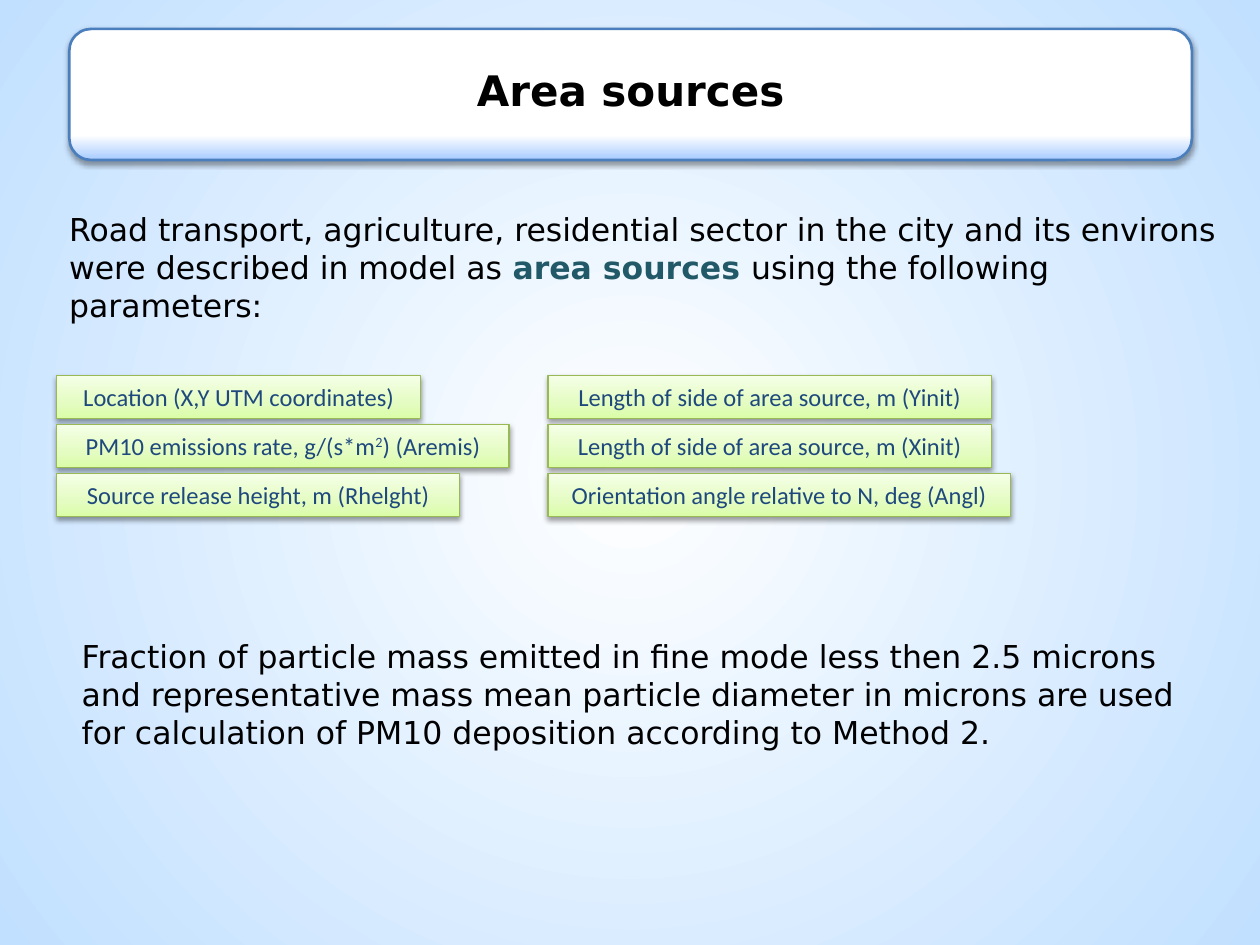
from dataclasses import dataclass

from lxml.etree import SubElement
from pptx import Presentation
from pptx.dml.color import RGBColor
from pptx.enum.shapes import MSO_SHAPE as Preset
from pptx.enum.text import MSO_ANCHOR as Anchor, MSO_AUTO_SIZE as AutoSize, PP_ALIGN as Align
from pptx.oxml.ns import qn
from pptx.util import Inches, Pt

SLIDE_W, SLIDE_H = 10, 7.5
COLUMN_LEFTS = (0.45, 4.35)
FIRST_ROW, ROW_PITCH, ROW_HEIGHT = 2.98, 0.39, 0.34

BACKDROP = ((0, "FFFFFF"), (100, "C1E0FF"))
TITLE_FILL = ((0, "A7CBFF"), (19, "FFFFFF"))
PARAMETER_FILL = ((0, "DAFDA7"), (35, "E4FCC2"), (100, "F5FFE7"))

TITLE = {"name": "DejaVu Sans", "size": Pt(24), "bold": True}
BODY = {"name": "DejaVu Sans", "size": Pt(18), "bold": False}
LABEL = {"name": "Calibri", "size": Pt(14), "bold": False}


@dataclass(frozen=True)
class Span:
    text: str
    color: str = "000000"
    bold: bool = False
    raised: bool = False


@dataclass(frozen=True)
class Parameter:
    column: int
    row: int
    width: float
    text: str  # "^" encloses a superscript


PARAMETERS = (
    Parameter(0, 0, 2.89, "Location (X,Y UTM coordinates)"),
    Parameter(0, 1, 3.59, "PM10 emissions rate, g/(s*m^2^) (Aremis)"),
    Parameter(0, 2, 3.2, "Source release height, m (Rhelght)"),
    Parameter(1, 0, 3.52, "Length of side of area source, m (Yinit)"),
    Parameter(1, 1, 3.52, "Length of side of area source, m (Xinit)"),
    Parameter(1, 2, 3.67, "Orientation angle relative to N, deg (Angl)"),
)


def rgb(color: str) -> RGBColor:
    return RGBColor.from_string(color)


def add_gradient(fill, element, stops, radial: bool = False) -> None:
    """Set a gradient that runs upwards, or outwards from the centre."""
    fill.gradient()
    gradient = element.find(".//" + qn("a:gradFill"))
    for child in list(gradient):
        gradient.remove(child)
    stop_list = SubElement(gradient, qn("a:gsLst"))
    for percent, color in stops:
        stop = SubElement(stop_list, qn("a:gs"), pos=str(percent * 1000))
        SubElement(stop, qn("a:srgbClr"), val=color)
    if radial:
        circle = SubElement(gradient, qn("a:path"), path="circle")
        SubElement(circle, qn("a:fillToRect"), dict.fromkeys("ltrb", "50000"))
    else:
        SubElement(gradient, qn("a:lin"), ang="16200000", scaled="1")


def add_shadow(shape) -> None:
    shape.shadow.inherit = False
    effects = shape._element.spPr.find(qn("a:effectLst"))
    shadow = SubElement(effects, qn("a:outerShdw"), blurRad=str(Pt(3.1)),
                        dist=str(Pt(1.6)), dir="5400000", rotWithShape="0")
    black = SubElement(shadow, qn("a:srgbClr"), val="000000")
    SubElement(black, qn("a:alpha"), val="38000")


def write(shape, spans, font_format: dict, align=Align.LEFT, anchor=Anchor.TOP):
    frame = shape.text_frame
    frame.word_wrap = True
    frame.vertical_anchor = anchor
    paragraph = frame.paragraphs[0]
    paragraph.alignment = align
    for span in spans:
        run = paragraph.add_run()
        run.text = span.text
        for attribute, value in font_format.items():
            setattr(run.font, attribute, value)
        run.font.color.rgb = rgb(span.color)
        if span.bold:
            run.font.bold = True
        if span.raised:
            run.font._element.set("baseline", "30000")
    return paragraph


def add_panel(slide, preset, box, stops, outline: str, weight: float):
    panel = slide.shapes.add_shape(preset, *map(Inches, box))
    add_gradient(panel.fill, panel._element, stops)
    panel.line.color.rgb = rgb(outline)
    panel.line.width = Pt(weight)
    add_shadow(panel)
    return panel


def add_title(slide, text: str) -> None:
    panel = add_panel(slide, Preset.ROUNDED_RECTANGLE, (0.55, 0.23, 8.91, 1.04),
                      TITLE_FILL, "4B7EBC", 1.5)
    paragraph = write(panel, [Span(text)], TITLE, Align.CENTER, Anchor.MIDDLE)
    paragraph.line_spacing = 0.8
    properties = paragraph._p.get_or_add_pPr()
    properties.set("marL", str(Inches(0.38)))
    properties.set("indent", str(Inches(-0.38)))


def add_body(slide, box, *spans: Span) -> None:
    body = slide.shapes.add_textbox(*map(Inches, box))
    write(body, spans, BODY)
    body.text_frame.auto_size = AutoSize.SHAPE_TO_FIT_TEXT


def add_parameter(slide, parameter: Parameter) -> None:
    box = (COLUMN_LEFTS[parameter.column], FIRST_ROW + parameter.row * ROW_PITCH,
           parameter.width, ROW_HEIGHT)
    panel = add_panel(slide, Preset.RECTANGLE, box, PARAMETER_FILL, "98B955", 0.75)
    spans = [Span(part, "1F497D", raised=index % 2 == 1)
             for index, part in enumerate(parameter.text.split("^"))]
    write(panel, spans, LABEL, Align.CENTER)
    panel.text_frame.auto_size = AutoSize.SHAPE_TO_FIT_TEXT


def main() -> None:
    deck = Presentation()
    deck.slide_width, deck.slide_height = Inches(SLIDE_W), Inches(SLIDE_H)
    slide = deck.slides.add_slide(deck.slide_layouts[6])
    add_gradient(slide.background.fill, slide._element, BACKDROP, radial=True)

    add_title(slide, "Area sources")
    add_body(
        slide, (0.45, 1.62, 9.38, 1.01),
        Span("Road transport, agriculture, residential sector in the city and its "
             "environs were described in model as "),
        Span("area sources ", "215968", bold=True),
        Span("using the following parameters:"),
    )
    for parameter in PARAMETERS:
        add_parameter(slide, parameter)
    add_body(
        slide, (0.55, 5.01, 8.91, 1.01),
        Span("Fraction of particle mass emitted in fine mode less then 2.5 microns "
             "and representative mass mean particle diameter in microns are used "
             "for calculation of PM10 deposition according to Method 2."),
    )
    deck.save("out.pptx")


if __name__ == "__main__":
    main()
